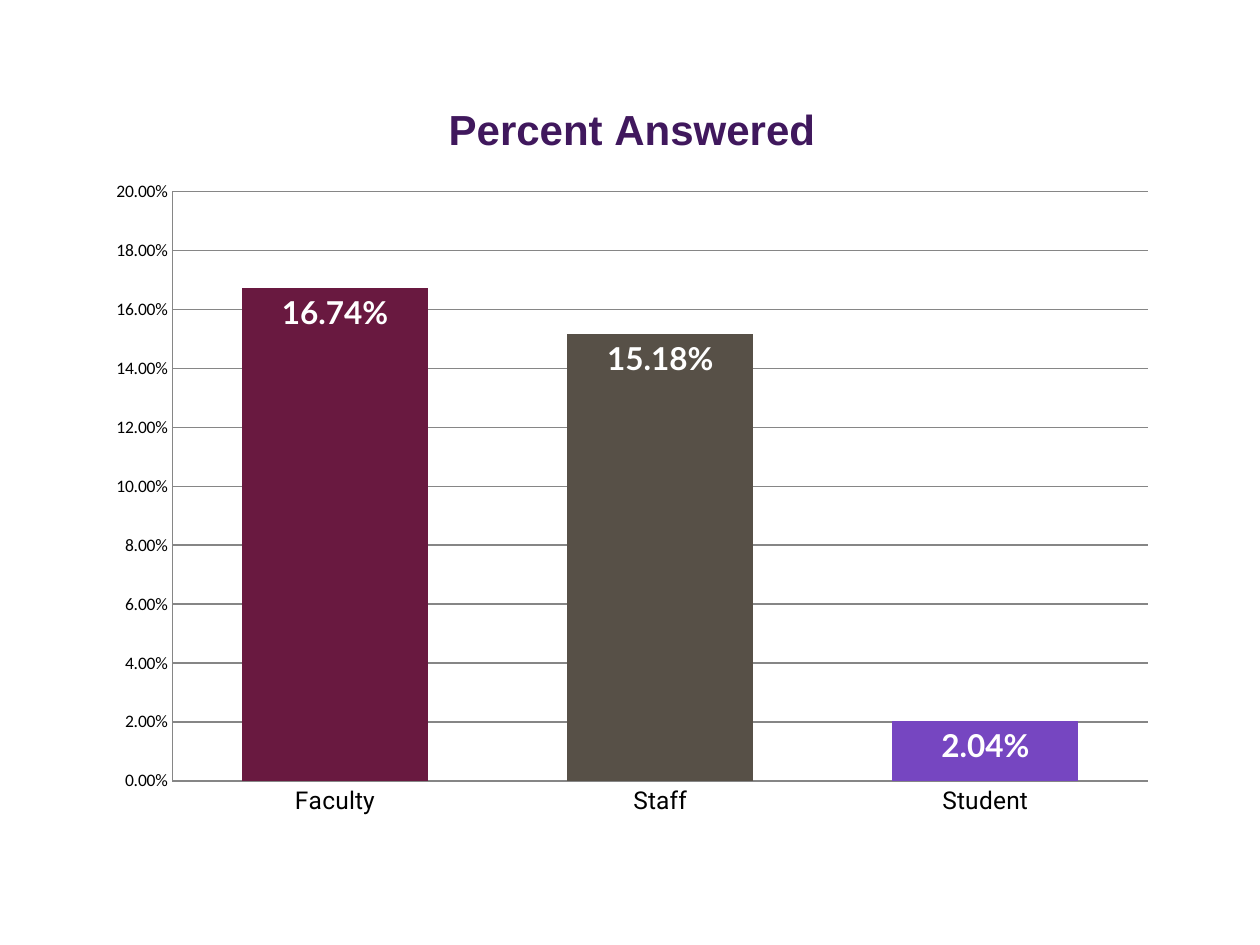
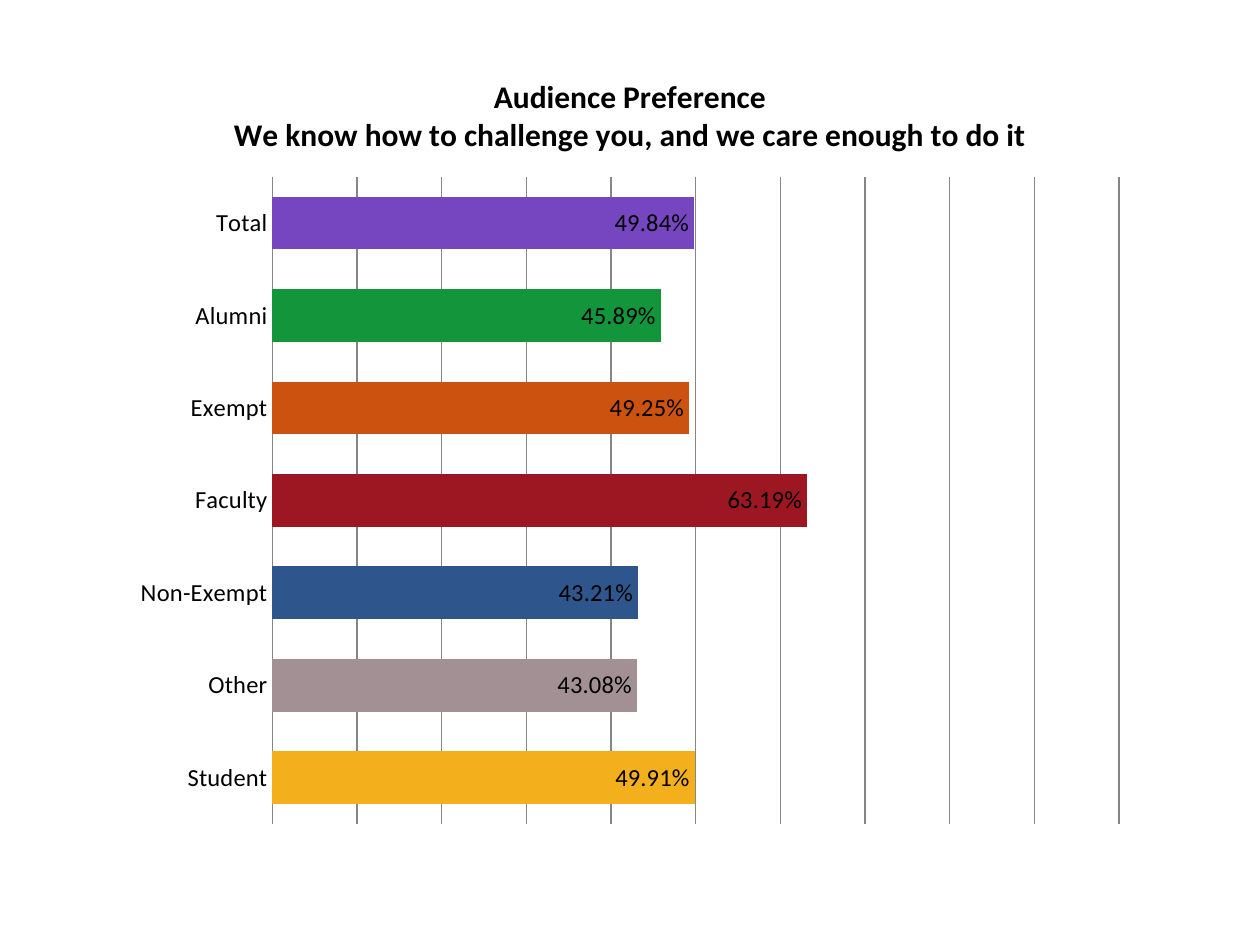
from lxml import etree
from pptx import Presentation
from pptx import util as u
from pptx.chart import data as chart_data
from pptx.dml import color as dml
from pptx.enum import chart as ch
from pptx.oxml import ns

COLORS = {
    "text": "000000", "heading": "40185D", "grid": "868686", "white": "FFFFFF",
    "maroon": "691940", "umber": "575047", "violet": "7646C1",
    "green": "13953C", "orange": "CC530F", "red": "9C1722",
    "blue": "2F568C", "taupe": "A39095", "gold": "F4AF1D",
}
PERCENT = "0.00%"

surveys = [
    {
        "heading": ["Percent Answered"],
        "heading_font": {"name": "Arial", "size": u.Pt(24), "bold": True},
        "heading_color": "heading",
        "kind": ch.XL_CHART_TYPE.COLUMN_CLUSTERED,
        "frame": (54, 41.8, 614.2, 433.4),
        "plot": (98.57, 109.43, 557.43, 336.9),
        "answers": [("Faculty", 0.1674, "maroon"), ("Staff", 0.1518, "umber"),
                    ("Student", 0.0204, "violet")],
        "groups_font": {"name": "Roboto", "size": u.Pt(14)},
        "groups_axis": {"reverse_order": False},
        "scale": {"maximum_scale": 0.2, "major_unit": 0.02, "visible": True},
        "label_font": {"name": "Lato", "size": u.Pt(18), "bold": True},
        "label_color": "white",
    },
    {
        "heading": ["Audience Preference",
                    "We know how to challenge you, and we care enough to do it"],
        "heading_font": {"name": "Calibri", "size": u.Pt(18), "bold": True},
        "heading_color": "text",
        "kind": ch.XL_CHART_TYPE.BAR_CLUSTERED,
        "frame": (69.1, 28.1, 581.8, 451.4),
        "plot": (155.71, 101.14, 483.72, 369.72),
        "answers": [("Total", 0.4984, "violet"), ("Alumni", 0.4589, "green"),
                    ("Exempt", 0.4925, "orange"), ("Faculty", 0.6319, "red"),
                    ("Non-Exempt", 0.4321, "blue"), ("Other", 0.4308, "taupe"),
                    ("Student", 0.4991, "gold")],
        "groups_font": {"name": "Calibri", "size": u.Pt(14)},
        "groups_axis": {"reverse_order": True},
        "scale": {"maximum_scale": 1, "major_unit": 0.1, "visible": False},
        "label_font": {"name": "Calibri", "size": u.Pt(14), "bold": False},
        "label_color": "text",
    },
]


def apply_format(target, values, color=None):
    for name, value in values.items():
        setattr(target, name, value)
    if color:
        target.color.rgb = dml.RGBColor.from_string(COLORS[color])


def place_plot(chart, plot, frame):
    area = chart.element.find(".//" + ns.qn("c:plotArea"))
    for automatic in area.findall(ns.qn("c:layout")):
        area.remove(automatic)
    layout = etree.Element(ns.qn("c:layout"))
    area.insert(0, layout)
    manual = etree.SubElement(layout, ns.qn("c:manualLayout"))
    left, top, width, height = frame
    settings = {
        "layoutTarget": "inner", "xMode": "edge", "yMode": "edge",
        "x": (plot[0] - left) / width, "y": (plot[1] - top) / height,
        "w": plot[2] / width, "h": plot[3] / height,
    }
    for tag, value in settings.items():
        etree.SubElement(manual, ns.qn("c:" + tag)).set("val", str(value))


deck = Presentation()
apply_format(deck, {"slide_width": u.Pt(720), "slide_height": u.Pt(540)})

for survey in surveys:
    slide = deck.slides.add_slide(deck.slide_layouts[6])
    groups, shares, fills = zip(*survey["answers"])
    results = chart_data.CategoryChartData(number_format=PERCENT)
    results.categories = groups
    results.add_series("Series 1", shares)
    frame = survey["frame"]
    chart = slide.shapes.add_chart(survey["kind"], *map(u.Pt, frame), results).chart
    apply_format(chart, {"has_legend": False, "has_title": True})
    apply_format(chart.font, {"name": "Calibri", "size": u.Pt(10)}, "text")
    place_plot(chart, survey["plot"], frame)

    heading = chart.chart_title.text_frame
    for index, line in enumerate(survey["heading"]):
        paragraph = heading.add_paragraph() if index else heading.paragraphs[0]
        run = paragraph.add_run()
        run.text = line
        for font in (paragraph.font, run.font):
            apply_format(font, survey["heading_font"], survey["heading_color"])

    group_axis, share_axis = chart.category_axis, chart.value_axis
    for axis in (group_axis, share_axis):
        apply_format(axis, {"major_tick_mark": ch.XL_TICK_MARK.NONE,
                            "minor_tick_mark": ch.XL_TICK_MARK.NONE})
        apply_format(axis.format.line, {"width": u.Pt(0.75)}, "grid")
    apply_format(group_axis, survey["groups_axis"])
    apply_format(group_axis.tick_labels.font, survey["groups_font"], "text")
    apply_format(share_axis, {"minimum_scale": 0, "has_major_gridlines": True, **survey["scale"]})
    apply_format(share_axis.major_gridlines.format.line, {"width": u.Pt(0.75)}, "grid")
    apply_format(share_axis.tick_labels, {"number_format": PERCENT,
                                          "number_format_is_linked": False})

    bars = chart.plots[0]
    apply_format(bars, {"gap_width": 75, "overlap": 40, "vary_by_categories": False,
                        "has_data_labels": True})
    apply_format(bars.data_labels, {"show_value": True, "number_format": PERCENT,
                                    "number_format_is_linked": False,
                                    "position": ch.XL_LABEL_POSITION.INSIDE_END})
    apply_format(bars.data_labels.font, survey["label_font"], survey["label_color"])
    for index, fill_name in enumerate(fills):
        fill = bars.series[0].points[index].format.fill
        fill.solid()
        fill.fore_color.rgb = dml.RGBColor.from_string(COLORS[fill_name])

deck.save("out.pptx")
